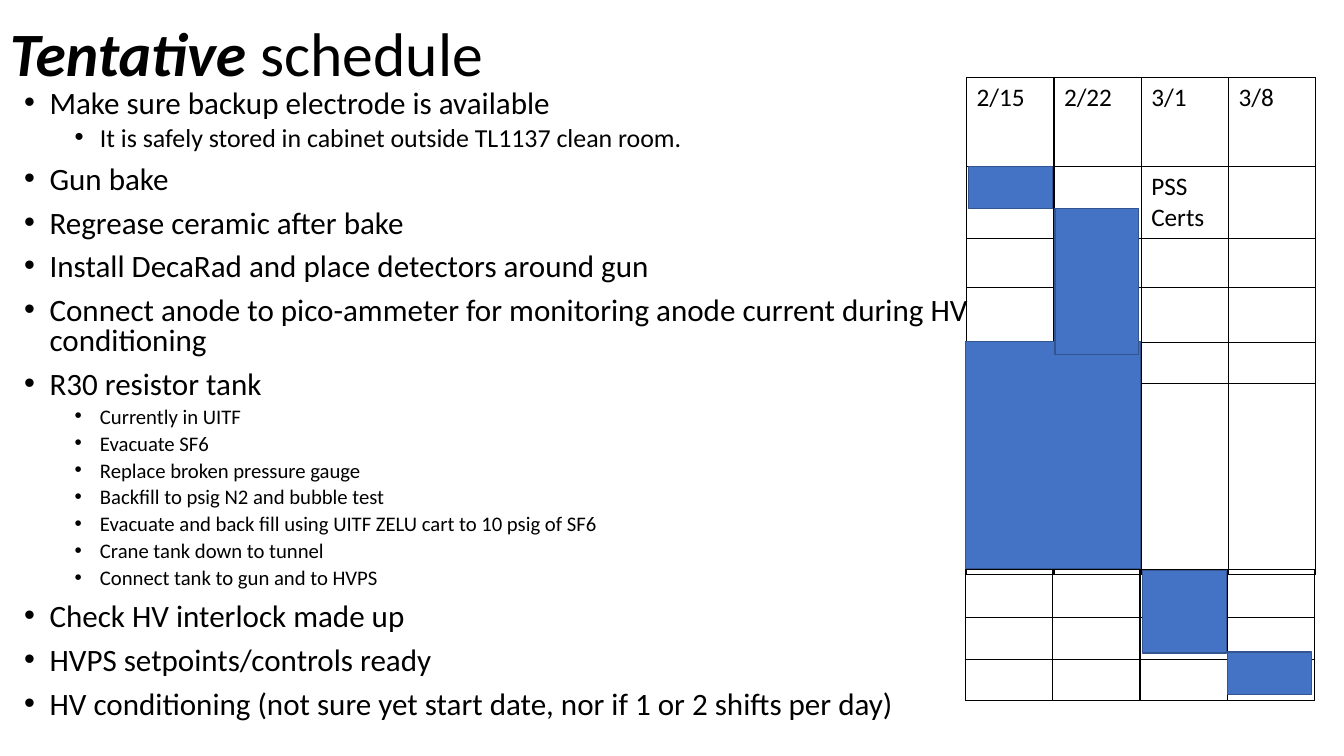
import pptx
import pptx.util
import pptx.oxml
import pptx.oxml.ns
import pptx.dml.color
import pptx.enum.text
import pptx.enum.shapes

Cm, Pt = pptx.util.Cm, pptx.util.Pt

# Content
TITLE = [("Tentative", True), (" schedule", False)]
TASKS = [  # (kind of line, text)
    ("task", "Make sure backup electrode is available"),
    ("note", "It is safely stored in cabinet outside TL1137 clean room."),
    ("task", "Gun bake"),
    ("task", "Regrease ceramic after bake"),
    ("task", "Install DecaRad and place detectors around gun"),
    ("task", "Connect anode to pico-ammeter for monitoring anode current "
             "during HV conditioning"),
    ("task", "R30 resistor tank"),
    ("step", "Currently in UITF"),
    ("step", "Evacuate SF6"),
    ("step", "Replace broken pressure gauge"),
    ("step", "Backfill to psig N2 and bubble test"),
    ("step", "Evacuate and back fill using UITF ZELU cart to 10 psig of SF6"),
    ("step", "Crane tank down to tunnel"),
    ("step", "Connect tank to gun and to HVPS"),
    ("task", "Check HV interlock made up"),
    ("task", "HVPS setpoints/controls ready"),
    ("task", "HV conditioning (not sure yet start date, nor if 1 or 2 shifts per day)"),
]
WEEKS = ["2/15", "2/22", "3/1", "3/8"]
GRIDS = [  # left, top, row heights (cm), cell texts
    (24.36, 1.96, [2.24, 1.8, 1.25, 1.38, 1.04, 4.8],
     {**{(0, col): week for col, week in enumerate(WEEKS)}, (1, 2): "PSS Certs"}),
    (24.33, 14.35, [1.22, 1.04, 1.04], {}),
]
COL = 2.2
BARS = [  # left, top, width, height (cm)
    (24.41, 4.19, 2.11, 1.07),
    (24.33, 8.61, 4.42, 5.72),
    (26.59, 5.26, 2.11, 3.68),
    (28.8, 14.38, 2.11, 2.08),
    (30.94, 16.43, 2.11, 1.07),
]

# Theme
THEME = {
    "font": "Calibri", "ink": "000000", "bar": "4472C4", "edge": "325491",
    "title": 44, "cell": 18,
    # type size, level, left indent (cm), space before (pt)
    "task": (22.2, 0, 0.64, 10),
    "note": (18.5, 1, 1.91, 5),
    "step": (14.8, 1, 1.91, 5),
}


def color(name):
    return pptx.dml.color.RGBColor.from_string(THEME[name])


def style(font, size, **extra):
    look = {"name": THEME["font"], "size": Pt(size), **extra}
    for key, value in look.items():
        setattr(font, key, value)
    font.color.rgb = color("ink")


def node(xml):
    return pptx.oxml.parse_xml(xml.replace(">", " " + pptx.oxml.ns.nsdecls("a") + ">", 1))


def text_box(slide, box, anchor):
    frame = slide.shapes.add_textbox(*map(Cm, box)).text_frame
    frame.word_wrap = True
    frame.vertical_anchor = anchor
    return frame


def add_title(slide):
    frame = text_box(slide, (0, 0, 33.87, 2.84), pptx.enum.text.MSO_ANCHOR.MIDDLE)
    para = frame.paragraphs[0]
    para.line_spacing = 0.9
    for text, strong in TITLE:
        run = para.add_run()
        run.text = text
        style(run.font, THEME["title"], bold=strong, italic=strong)


def add_tasks(slide):
    frame = text_box(slide, (0.36, 2.16, 24.74, 17.48), pptx.enum.text.MSO_ANCHOR.TOP)
    for i, (kind, text) in enumerate(TASKS):
        size, level, indent, gap = THEME[kind]
        para = frame.add_paragraph() if i else frame.paragraphs[0]
        props = para._p.get_or_add_pPr()
        props.set("marL", str(Cm(indent)))
        props.set("indent", str(-Cm(0.64)))
        props.append(node('<a:buFont typeface="Arial"></a:buFont>'))
        props.append(node('<a:buChar char="•"></a:buChar>'))
        para.level = level
        para.line_spacing = 0.8
        if i:
            para.space_before = Pt(gap)
        run = para.add_run()
        run.text = text
        style(run.font, size)


def border(cell):
    props = cell._tc.get_or_add_tcPr()
    for i, side in enumerate(("lnL", "lnR", "lnT", "lnB")):
        props.insert(i, node(
            f'<a:{side} w="{Pt(1)}"><a:solidFill><a:srgbClr val="{THEME["ink"]}"/>'
            f'</a:solidFill></a:{side}>'))


def add_grid(slide, left, top, rows, texts):
    size = (len(rows), len(WEEKS))
    box = (left, top, COL * len(WEEKS), sum(rows))
    table = slide.shapes.add_table(*size, *map(Cm, box)).table
    table.first_row = table.horz_banding = False
    for col in table.columns:
        col.width = Cm(COL)
    for r, height in enumerate(rows):
        table.rows[r].height = Cm(height)
        for c in range(len(WEEKS)):
            cell = table.cell(r, c)
            cell.fill.background()
            border(cell)
            cell.text = texts.get((r, c), "")
            style(cell.text_frame.paragraphs[0].font, THEME["cell"])


def add_bar(slide, box):
    bar = slide.shapes.add_shape(pptx.enum.shapes.MSO_SHAPE.RECTANGLE, *map(Cm, box))
    bar.shadow.inherit = False
    bar.fill.solid()
    bar.fill.fore_color.rgb = color("bar")
    bar.line.color.rgb = color("edge")
    bar.line.width = Pt(1)


def main():
    deck = pptx.Presentation()
    deck.slide_width, deck.slide_height = Cm(33.87), Cm(19.05)
    slide = deck.slides.add_slide(deck.slide_layouts[6])
    # Text on the left
    add_title(slide)
    add_tasks(slide)
    # Week grids with the bars on top
    for grid in GRIDS:
        add_grid(slide, *grid)
    for box in BARS:
        add_bar(slide, box)
    deck.save("out.pptx")


if __name__ == "__main__":
    main()
